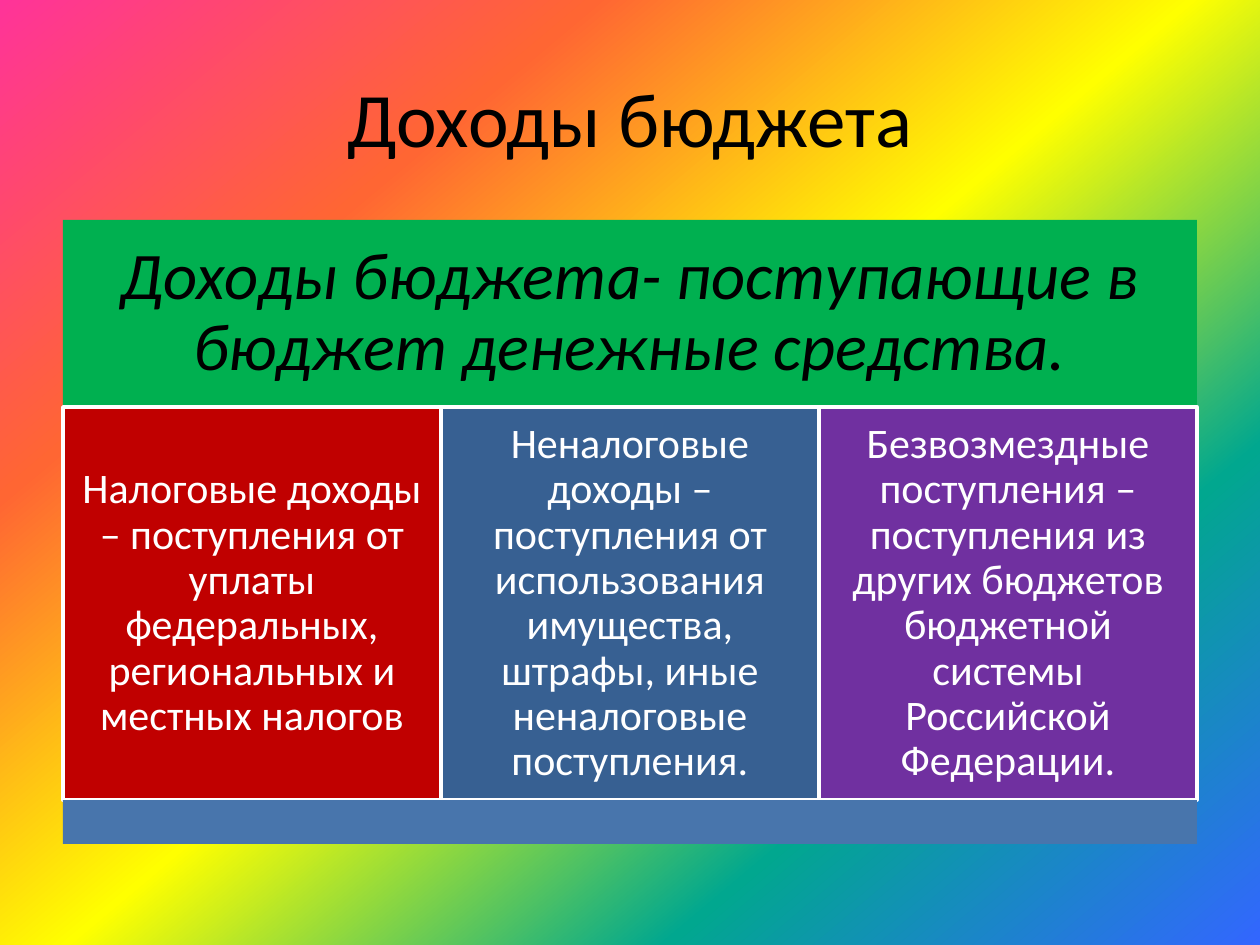
from lxml import etree
from pptx import Presentation
from pptx import util as u
from pptx.dml import color as dml
from pptx.enum import shapes, text
from pptx.oxml import ns

SCALE = 914400 / 126
LEFT, WIDTH = 63, 1134
HEADER_TOP, COLUMNS_TOP, FOOTER_TOP, FOOTER_BOTTOM = 220, 407, 800, 844

RAINBOW = [(0, "FF3399"), (25, "FF6633"), (50, "FFFF00"), (75, "01A78F"), (100, "3366FF")]
INCOME_KINDS = [
    ("C00000", "Налоговые доходы – поступления от уплаты федеральных, региональных и местных налогов"),
    ("376092", "Неналоговые доходы – поступления от использования имущества, штрафы, иные неналоговые поступления."),
    ("7030A0", "Безвозмездные поступления – поступления из других бюджетов бюджетной системы Российской Федерации."),
]


def px(length):
    return u.Emu(round(length * SCALE))


def rgb(value):
    return dml.RGBColor.from_string(value)


def write_text(shape, content, size=24, color="FFFFFF", italic=False, spacing=0.9, inset=13):
    frame = shape.text_frame
    frame.word_wrap = True
    frame.auto_size = text.MSO_AUTO_SIZE.NONE
    frame.vertical_anchor = text.MSO_ANCHOR.MIDDLE
    frame.margin_left = frame.margin_right = px(inset)
    frame.margin_top = frame.margin_bottom = px(inset)
    paragraph = frame.paragraphs[0]
    paragraph.alignment = text.PP_ALIGN.CENTER
    paragraph.line_spacing = spacing
    run = paragraph.add_run()
    run.text = content
    run.font.name = "Calibri"
    run.font.size = u.Pt(size)
    run.font.italic = italic
    run.font.color.rgb = rgb(color)


class SlideBuilder:
    def __init__(self, presentation):
        self.slide = presentation.slides.add_slide(presentation.slide_layouts[5])

    def background(self, stops, angle):
        fill = self.slide.background.fill
        fill.gradient()
        fill.gradient_angle = 360 - angle
        stop_list = self.slide.element.find(".//" + ns.qn("a:gsLst"))
        for stop in list(stop_list):
            stop_list.remove(stop)
        for position, color in stops:
            stop = etree.SubElement(stop_list, ns.qn("a:gs"), pos=str(position * 1000))
            etree.SubElement(stop, ns.qn("a:srgbClr"), val=color)

    def title(self, content, left, top, width, height):
        shape = self.slide.shapes.title
        shape.left, shape.top, shape.width, shape.height = map(px, (left, top, width, height))
        write_text(shape, content, size=44, color="000000", spacing=1.0)

    def block(self, left, top, width, height, fill, outline=None):
        shape = self.slide.shapes.add_shape(
            shapes.MSO_SHAPE.RECTANGLE, *map(px, (left, top, width, height)))
        shape.shadow.inherit = False
        shape.fill.solid()
        shape.fill.fore_color.rgb = rgb(fill)
        if outline:
            shape.line.color.rgb = rgb(outline)
            shape.line.width = u.Pt(2)
        else:
            shape.line.fill.background()
        return shape


def main():
    presentation = Presentation()
    presentation.slide_width, presentation.slide_height = px(1260), px(945)
    builder = SlideBuilder(presentation)
    builder.background(RAINBOW, 50)
    builder.title("Доходы бюджета", LEFT, 38, WIDTH, 158)

    header = builder.block(LEFT, HEADER_TOP, WIDTH, COLUMNS_TOP - HEADER_TOP, "00B050")
    write_text(header, "Доходы бюджета- поступающие в бюджет денежные средства.",
               size=38, color="000000", italic=True, inset=20)

    column_width = WIDTH // len(INCOME_KINDS)
    for index, (color, content) in enumerate(INCOME_KINDS):
        column = builder.block(LEFT + index * column_width, COLUMNS_TOP, column_width,
                               FOOTER_TOP - COLUMNS_TOP, color, outline="FFFFFF")
        write_text(column, content)

    builder.block(LEFT, FOOTER_TOP, WIDTH, FOOTER_BOTTOM - FOOTER_TOP, "4875AC")
    presentation.save("out.pptx")


if __name__ == "__main__":
    main()
